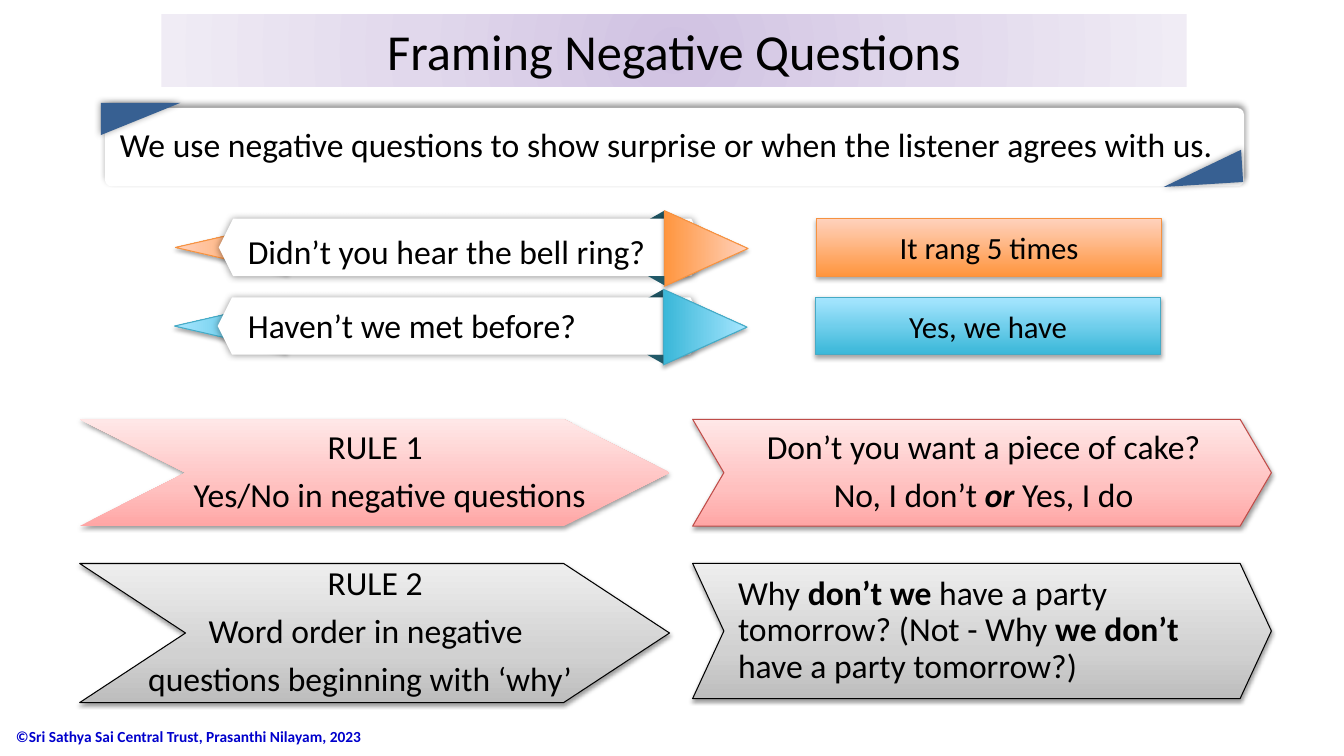
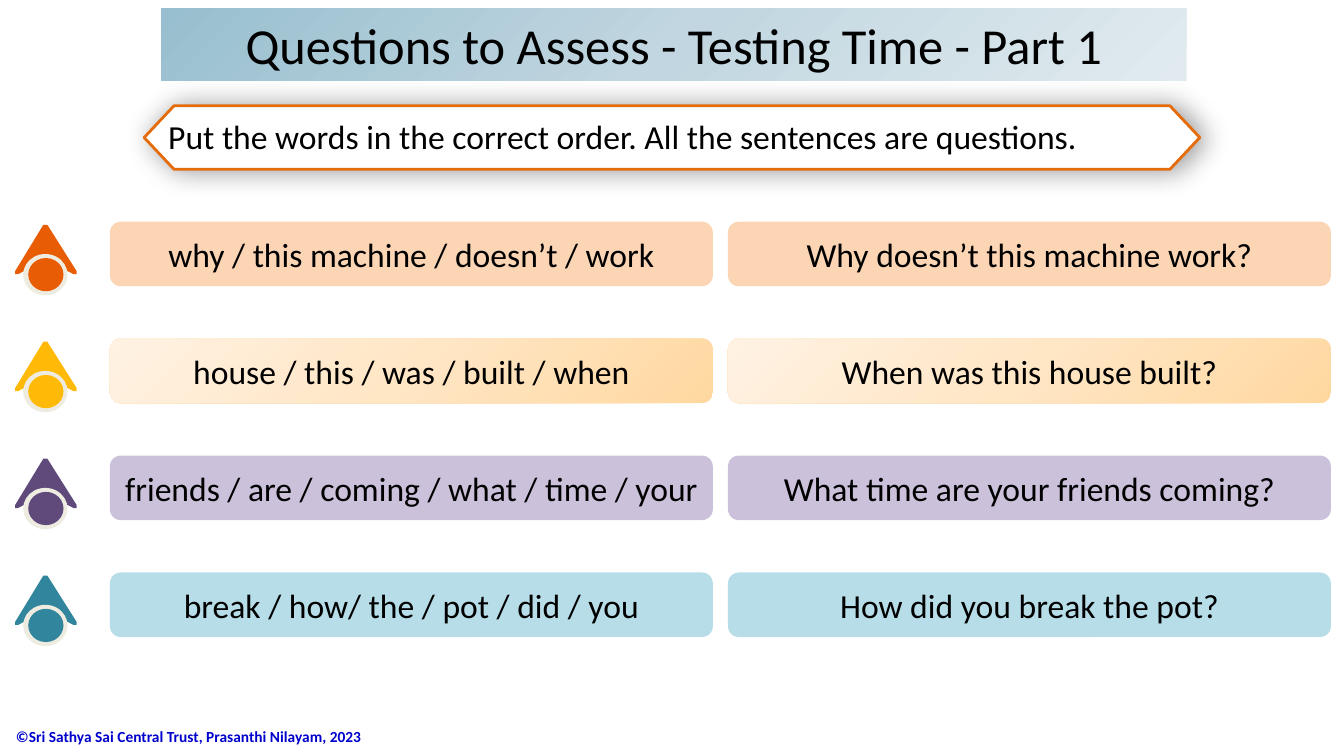
"""Build two slides on negative questions: the rules, then a word-order test."""
from pptx import Presentation
from pptx.dml.color import RGBColor
from pptx.enum.shapes import MSO_SHAPE
from pptx.enum.text import MSO_ANCHOR, MSO_AUTO_SIZE, PP_ALIGN
from pptx.oxml import parse_xml
from pptx.oxml.ns import nsdecls, qn
from pptx.util import Inches, Pt

LEFT, CENTER = PP_ALIGN.LEFT, PP_ALIGN.CENTER
TOP, MIDDLE = MSO_ANCHOR.TOP, MSO_ANCHOR.MIDDLE
NO_FIT = MSO_AUTO_SIZE.NONE
RECT, ROUNDED = MSO_SHAPE.RECTANGLE, MSO_SHAPE.ROUNDED_RECTANGLE
TRIANGLE, CORNER = MSO_SHAPE.ISOSCELES_TRIANGLE, MSO_SHAPE.RIGHT_TRIANGLE
HEXAGON, OVAL = MSO_SHAPE.HEXAGON, MSO_SHAPE.OVAL

COLORS = {
    "text": "000000", "white": "FFFFFF", "footer": "0000CC", "fold": "215968",
    "navy": "376092", "orange line": "F69240", "blue line": "46AAC5",
    "red line": "BF4C48", "frame": "E46C0A", "cream": "EEECE1",
    "peach": "FCD5B5", "lilac": "CCC1DA", "aqua": "B7DEE8",
    "flame": "E85D04", "amber": "FFBA08", "purple": "604A7B", "teal": "31859C",
}
UPWARD = '<a:lin ang="16200000" scaled="0"/>'
DIAGONAL = '<a:lin ang="13500000" scaled="0"/>'
RADIAL = ('<a:path path="circle"><a:fillToRect l="50000" t="50000" '
          'r="50000" b="50000"/></a:path>')
FROM_CORNER = '<a:path path="circle"><a:fillToRect r="100000" b="100000"/></a:path>'
GRADIENTS = {
    "violet title": ({0: "D0C2E2", 50: "E1D8EC", 100: "F0ECF5"}, RADIAL),
    "blue title": ({0: "98BFCF", 50: "C1D6E0", 100: "E1EBEF"}, FROM_CORNER),
    "orange": ({0: "FF953E", 100: "FFD2BD"}, UPWARD),
    "blue": ({0: "39B7D8", 100: "A7E6FF"}, UPWARD),
    "red": ({0: "FFA6A5", 35: "FFC0BF", 100: "FFE7E7"}, UPWARD),
    "grey": ({0: "BDBDBD", 35: "D1D1D1", 100: "EEEEEE"}, UPWARD),
    "sand": ({0: "FFD8A0", 50: "FFE6C5", 100: "FFF2E3"}, DIAGONAL),
}
SHADOWS = {
    "drop": (35, 3.1, 1.8, 90), "soft": (38, 3.1, 1.6, 90),
    "glow": (40, 5, 0, 0), "above": (40, 4, 3, 270), "wide": (40, 19, 3, 0),
}


def paint(shape, fill, line=None, shadow=None, width=0.75):
    """Set fill, outline and shadow by their names."""
    properties = shape.element.spPr
    if fill in GRADIENTS:
        stops, direction = GRADIENTS[fill]
        marks = "".join(f'<a:gs pos="{place * 1000}"><a:srgbClr val="{color}"/></a:gs>'
                        for place, color in stops.items())
        shape.fill.background()
        properties.replace(properties.find(qn("a:noFill")), parse_xml(
            f'<a:gradFill {nsdecls("a")} rotWithShape="1">'
            f"<a:gsLst>{marks}</a:gsLst>{direction}</a:gradFill>"))
    else:
        shape.fill.solid()
        shape.fill.fore_color.rgb = RGBColor.from_string(COLORS[fill])
    if line:
        shape.line.color.rgb = RGBColor.from_string(COLORS[line])
        shape.line.width = Pt(width)
    else:
        shape.line.fill.background()
    shape.shadow.inherit = False
    if shadow:
        alpha, blur, distance, angle = SHADOWS[shadow]
        properties.find(qn("a:effectLst")).append(parse_xml(
            f'<a:outerShdw {nsdecls("a")} blurRad="{Pt(blur)}" dist="{Pt(distance)}" '
            f'dir="{angle * 60000}" algn="ctr" rotWithShape="0"><a:srgbClr val="000000">'
            f'<a:alpha val="{alpha * 1000}"/></a:srgbClr></a:outerShdw>'))


def write(shape, lines, size=24, align=CENTER, anchor=MIDDLE, color="text", emphasis=None):
    """Fill a shape with paragraphs; parts between asterisks get the emphasis."""
    frame = shape.text_frame
    frame.word_wrap, frame.vertical_anchor = True, anchor
    for number, line in enumerate(lines):
        paragraph = frame.add_paragraph() if number else frame.paragraphs[0]
        paragraph.alignment = align
        for position, part in enumerate(line.split("*")):
            run = paragraph.add_run()
            run.text = part
            run.font.color.rgb = RGBColor.from_string(COLORS[color])
            formats = {"name": "Calibri", "size": Pt(size)}
            if position % 2:
                formats.update(emphasis)
            for attribute, value in formats.items():
                setattr(run.font, attribute, value)
    return frame


deck = Presentation()
deck.slide_width, deck.slide_height = Inches(13.33), Inches(7.5)
layout = deck.slide_layouts[5]

slides = []
for heading, top, fill in (
    ("Framing Negative Questions", 0.14, "violet title"),
    ("Questions to Assess - Testing Time - Part 1", 0.08, "blue title"),
):
    slide = deck.slides.add_slide(layout)
    title = slide.shapes.title
    title.left, title.top = Inches(1.6), Inches(top)
    title.width, title.height = Inches(10.17), Inches(0.72)
    paint(title, fill)
    write(title, [heading], 36).auto_size = NO_FIT
    slides.append(slide.shapes)
rules, test = slides

footer = rules.add_textbox(Inches(0.06), Inches(7.1), Inches(3.81), Inches(0.41))
write(footer, ["*©Sri Sathya Sai Central Trust, Prasanthi Nilayam, 2023*"], 11, LEFT,
      color="footer", emphasis={"bold": True})
layout.shapes.element.append(footer.element)

for question, answer, fill, line, left, top, text_left, text_top, align in (
    ("Didn’t you hear the bell ring?", "It rang 5 times", "orange", "orange line",
     2.17, 2.17, 2.34, 2.24, CENTER),
    ("Haven’t we met before?", "Yes, we have", "blue", "blue line",
     2.16, 2.95, 2.36, 2.98, LEFT),
):
    for kind, x, y, width, height, turn, flips, look in (
        (TRIANGLE, -0.13, -0.27, 0.51, 1.11, 270, ["flipH"], (fill, line, "drop")),
        (CORNER, 4.26, -0.08, 0.16, 0.09, 0, ["flipH"], ("fold",)),
        (HEXAGON, 0, 0, 4.83, 0.57, 0, ["flipH"], ("white", None, "glow")),
        (TRIANGLE, 4.46, -0.12, 0.75, 0.83, 90, ["flipH"], (fill, line, "drop")),
        (CORNER, 4.26, 0.57, 0.16, 0.09, 0, ["flipH", "flipV"], ("fold",)),
    ):
        piece = rules.add_shape(kind, Inches(left + x), Inches(top + y),
                                Inches(width), Inches(height))
        piece.rotation = turn
        for flip in flips:
            piece.element.spPr.find(qn("a:xfrm")).set(flip, "1")
        paint(piece, *look)
    question_box = rules.add_textbox(Inches(text_left), Inches(text_top),
                                     Inches(4.18), Inches(0.5))
    write(question_box, [question], align=align, anchor=TOP)
    reply = rules.add_shape(RECT, Inches(left + 5.93), Inches(top),
                            Inches(3.42), Inches(0.57))
    paint(reply, fill, line, "drop")
    write(reply, [answer], 22)

usage_panel = rules.add_shape(ROUNDED, Inches(1.04), Inches(1.07), Inches(11.3), Inches(0.78))
usage_panel.adjustments[0] = 0.09
paint(usage_panel, "white", shadow="above")
for left, top, turn in ((1, 1.02, 0), (11.53, 1.51, 176.4)):
    corner = rules.add_shape(CORNER, Inches(left), Inches(top), Inches(0.79), Inches(0.32))
    corner.rotation = turn
    corner.element.spPr.find(qn("a:xfrm")).set("flipV", "1")
    paint(corner, "navy", shadow="glow")
usage = rules.add_textbox(Inches(1.09), Inches(1.18), Inches(11.14), Inches(0.5))
write(usage, ["We use negative questions to show surprise or when the listener agrees with us."],
      align=LEFT, anchor=TOP)

BOLD, BOLD_ITALIC = {"bold": True}, {"bold": True, "italic": True}
for left, top, width, height, notch, fill, line, align, emphasis, indents, lines in (
    (0.79, 4.16, 5.85, 1.06, 1.05, "red", None, LEFT, None, (2.01, 0.68),
     ["RULE 1", "Yes/No in negative questions"]),
    (6.87, 4.16, 5.74, 1.06, 0.31, "red", "red line", CENTER, BOLD_ITALIC, (0, 0),
     ["Don’t you want a piece of cake?", "No, I don’t *or* Yes, I do"]),
    (0.79, 5.59, 5.85, 1.38, 1.05, "grey", "text", LEFT, None, (2.01, 0.83, 0.23),
     ["RULE 2", "Word order in negative", "questions beginning with ‘why’"]),
    (6.87, 5.59, 5.74, 1.34, 0.31, "grey", "text", LEFT, BOLD, (0,),
     ["Why *don’t we* have a party tomorrow? (Not - Why *we don’t* have a party tomorrow?)"]),
):
    right, middle, bottom = left + width, top + height / 2, top + height
    outline = rules.build_freeform(Inches(left), Inches(top))
    outline.add_line_segments([(Inches(x), Inches(y)) for x, y in (
        (right - notch, top), (right, middle), (right - notch, bottom),
        (left, bottom), (left + notch, middle))])
    arrow = outline.convert_to_shape()
    paint(arrow, fill, line, "soft")
    frame = write(arrow, lines, align=align, emphasis=emphasis)
    for side, inset in {"left": 0.45, "top": 0.02, "right": 0.42, "bottom": 0.02}.items():
        setattr(frame, f"margin_{side}", Inches(inset))
    for paragraph, node, indent in zip(frame.paragraphs, arrow.element.iter(qn("a:p")), indents):
        paragraph.line_spacing, paragraph.space_after = 0.9, Pt(8.4)
        node.get_or_add_pPr().set("marL", str(Inches(indent)))

task_frame = test.add_shape(HEXAGON, Inches(1.43), Inches(1.05), Inches(10.47), Inches(0.63))
task_frame.adjustments[0] = 0.47
paint(task_frame, "white", "frame", "wide", 2)
task = test.add_textbox(Inches(1.57), Inches(1.1), Inches(10.13), Inches(0.5))
write(task, ["Put the words in the correct order. All the sentences are questions."],
      align=LEFT, anchor=TOP)

CHEVRON = ((0.47, 0.03), (0.76, 0.49), (0.76, 0.52), (0.73, 0.52), (0.46, 0.38),
           (0.44, 0.38), (0.18, 0.52), (0.15, 0.52), (0.15, 0.49))
for row, (words, sentence, fill, accent) in enumerate((
    ("why / this machine / doesn’t / work", "Why doesn’t this machine work?", "peach", "flame"),
    ("house / this / was / built / when", "When was this house built?", "sand", "amber"),
    ("friends / are / coming / what / time / your", "What time are your friends coming?",
     "lilac", "purple"),
    ("break / how/ the / pot / did / you", "How did you break the pot?", "aqua", "teal"),
)):
    top = 2.2 + 1.16 * row
    for left, text in ((1.09, words), (7.22, sentence)):
        bar = test.add_shape(ROUNDED, Inches(left), Inches(top), Inches(5.98), Inches(0.64))
        paint(bar, fill)
        write(bar, [text])
    outline = test.build_freeform(Inches(0.43), Inches(top + 0.03))
    outline.add_line_segments([(Inches(x), Inches(top + y)) for x, y in CHEVRON])
    paint(outline.convert_to_shape(), accent)
    for x, y, width, height, color in ((0.23, 0.32, 0.44, 0.41, "cream"),
                                       (0.28, 0.36, 0.35, 0.33, accent)):
        disc = test.add_shape(OVAL, Inches(x), Inches(top + y), Inches(width), Inches(height))
        paint(disc, color)

deck.save("out.pptx")
